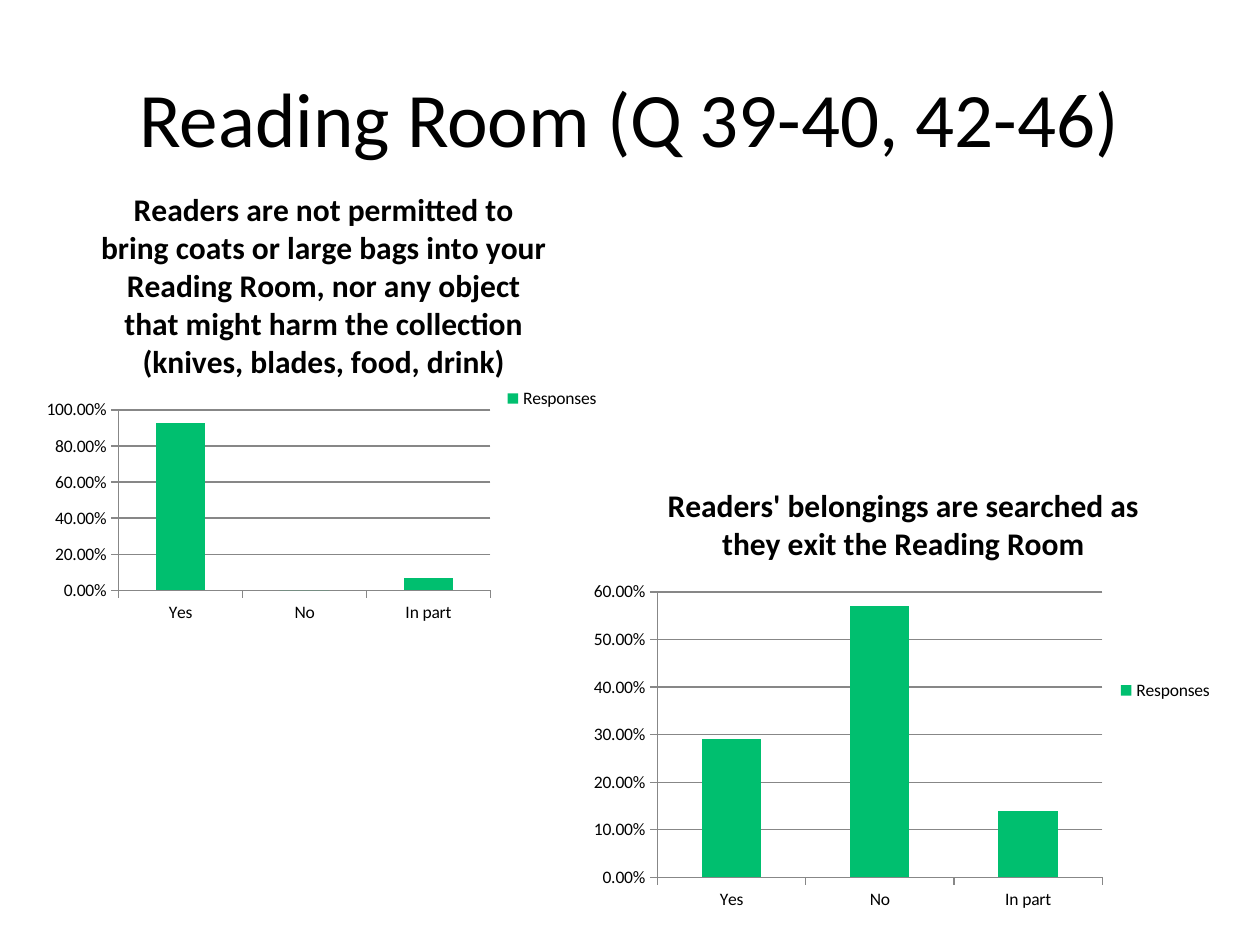
from pptx import Presentation
from pptx.chart.data import CategoryChartData
from pptx.dml.color import RGBColor
from pptx.enum.chart import XL_CHART_TYPE, XL_LEGEND_POSITION, XL_TICK_MARK
from pptx.enum.text import MSO_ANCHOR, PP_ALIGN
from pptx.util import Pt

COLORS = {"text": "000000", "bar": "00BF6F", "line": "878787"}
FONT = "Calibri"
CATS = ["Yes", "No", "In part"]
CHARTS = [
    ((20, 94.5, 330, 266.5),
     "Readers are not permitted to bring coats or large bags into your "
     "Reading Room, nor any object that might harm the collection "
     "(knives, blades, food, drink)",
     (0.93, 0, 0.07), 0.2),
    ((332, 264, 368.5, 261),
     "Readers' belongings are searched as they exit the Reading Room",
     (0.29, 0.57, 0.14), 0.1),
]


def put(item, **vals):
    """Set each given attribute on the item."""
    for name, val in vals.items():
        setattr(item, name, val)


def tint(name):
    """Return the named colour."""
    return RGBColor.from_string(COLORS[name])


def style(font, size, bold=False):
    """Apply the slide's typeface at the given size."""
    put(font, name=FONT, size=Pt(size), bold=bold)
    font.color.rgb = tint("text")


def add_title(slide, box, text):
    """Place the centred slide title in the box."""
    frame = slide.shapes.add_textbox(*map(Pt, box)).text_frame
    put(frame, word_wrap=True, vertical_anchor=MSO_ANCHOR.MIDDLE)
    para = frame.paragraphs[0]
    put(para, text=text, alignment=PP_ALIGN.CENTER)
    style(para.runs[0].font, 44)


def add_bars(slide, box, title, vals, step):
    """Place a column chart of responses in the box."""
    data = CategoryChartData(number_format="0.00%")
    data.categories = CATS
    data.add_series("Responses", vals)
    chart = slide.shapes.add_chart(
        XL_CHART_TYPE.COLUMN_CLUSTERED, *map(Pt, box), data).chart
    style(chart.font, 10)
    put(chart, has_title=True, has_legend=True)
    para = chart.chart_title.text_frame.paragraphs[0]
    para.text = title
    style(para.runs[0].font, 18, True)
    put(chart.legend, position=XL_LEGEND_POSITION.RIGHT,
        include_in_layout=False)

    plot = chart.plots[0]
    put(plot, gap_width=150, vary_by_categories=False)
    fill = plot.series[0].format.fill
    fill.solid()
    fill.fore_color.rgb = tint("bar")

    axis = chart.value_axis
    put(axis, has_major_gridlines=True, minimum_scale=0,
        maximum_scale=step * (5 if step > 0.1 else 6), major_unit=step)
    put(axis.tick_labels, number_format="0.00%",
        number_format_is_linked=False)
    for part in (axis, chart.category_axis):
        part.major_tick_mark = XL_TICK_MARK.OUTSIDE
    for part in (axis, chart.category_axis, axis.major_gridlines):
        part.format.line.color.rgb = tint("line")
        part.format.line.width = Pt(0.75)


def main():
    """Build and save the slide."""
    deck = Presentation()
    put(deck, slide_width=Pt(720), slide_height=Pt(540))
    slide = deck.slides.add_slide(deck.slide_layouts[6])
    add_title(slide, (36, 21.6, 648, 90), "Reading Room (Q 39-40, 42-46)")
    for spec in CHARTS:
        add_bars(slide, *spec)
    deck.save("out.pptx")


if __name__ == "__main__":
    main()
